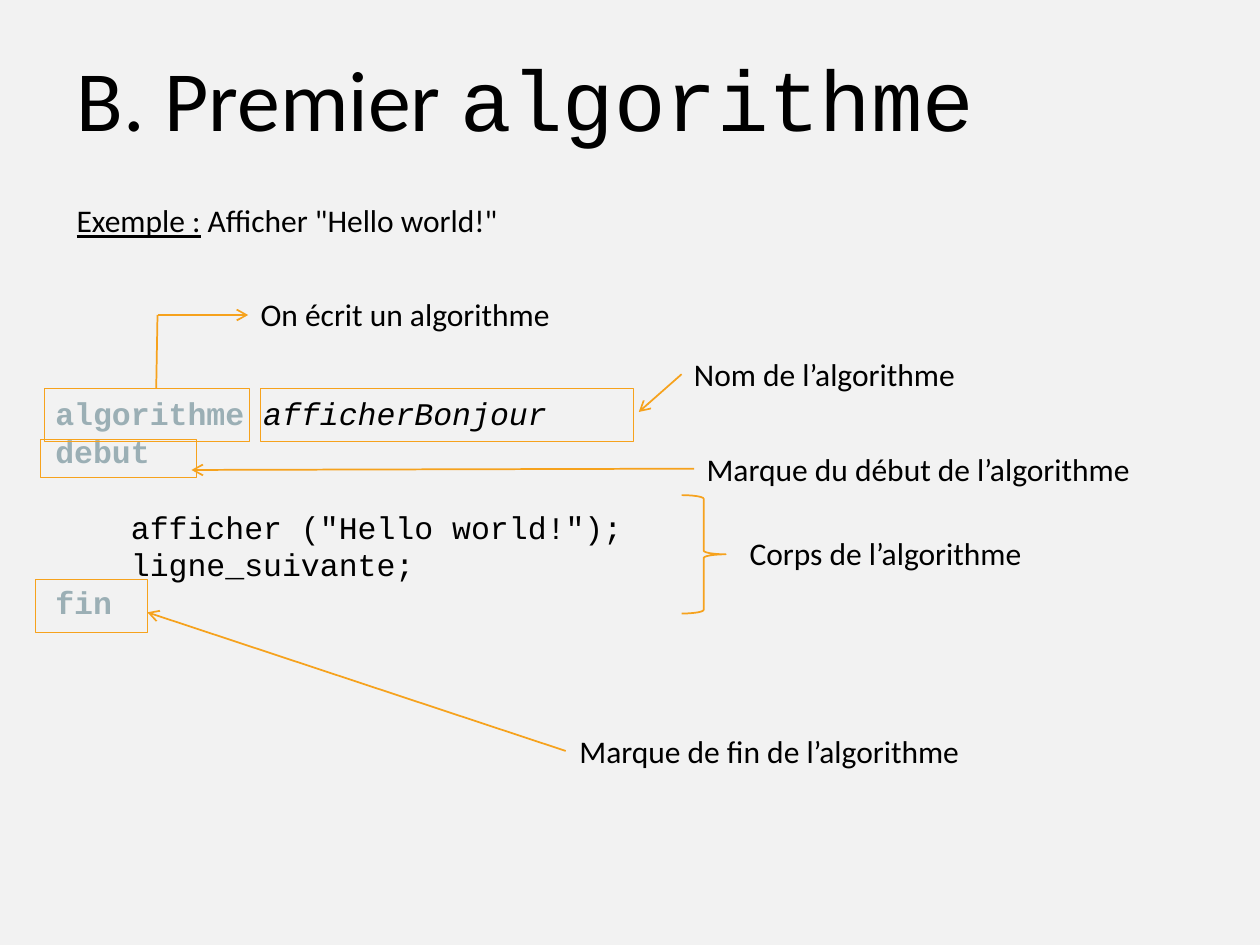
from lxml.etree import SubElement
from pptx import Presentation
from pptx.dml.color import RGBColor
from pptx.enum.shapes import MSO_CONNECTOR as CONN, MSO_SHAPE as SHAPE
from pptx.enum.text import MSO_ANCHOR as ANCHOR, PP_ALIGN as ALIGN
from pptx.oxml.ns import qn
from pptx.util import Inches, Pt

COLORS = {"paper": "F2F2F2", "ink": "000000", "keyword": "9BAFB5", "accent": "F6A21D"}
SANS, MONO = "Calibri", "Courier New"


class Page:
    def __init__(self, prs):
        self.s = prs.slides.add_slide(prs.slide_layouts[5])
        fill = self.s.background.fill
        fill.solid()
        fill.fore_color.rgb = self.color("paper")

    @staticmethod
    def color(name):
        return RGBColor.from_string(COLORS[name])

    def run(self, p, text, font=SANS, size=18, color="ink", **style):
        r = p.add_run()
        r.text = text
        r.font.name, r.font.size = font, Pt(size)
        r.font.color.rgb = self.color(color)
        for key, value in style.items():
            setattr(r.font, key, value)

    def title(self, x, y, w, h):
        sp = self.s.shapes.title
        sp.left, sp.top, sp.width, sp.height = map(Inches, (x, y, w, h))
        sp.text_frame.vertical_anchor = ANCHOR.MIDDLE
        p = sp.text_frame.paragraphs[0]
        p.alignment = ALIGN.LEFT
        return p

    def text(self, x, y, w, h=0.4):
        tf = self.s.shapes.add_textbox(*map(Inches, (x, y, w, h))).text_frame
        tf.word_wrap = True
        return tf

    def label(self, text, x, y, w):
        self.run(self.text(x, y, w).paragraphs[0], text)

    def outline(self, kind, x, y, w, h, weight=0.5):
        sp = self.s.shapes.add_shape(kind, *map(Inches, (x, y, w, h)))
        sp.shadow.inherit = False
        sp.fill.background()
        sp.line.color.rgb = self.color("accent")
        sp.line.width = Pt(weight)

    def line(self, start, end, arrow=True):
        c = self.s.shapes.add_connector(CONN.STRAIGHT, *map(Inches, start + end))
        c.line.color.rgb = self.color("accent")
        c.line.width = Pt(1)
        if arrow:
            SubElement(c.line._get_or_add_ln(), qn("a:tailEnd"), type="arrow")
        SubElement(c._element.spPr, qn("a:effectLst"))

    def code(self, x, y, w, h, lines):
        """Write lines of (indent in inches, space before in points, runs)."""
        tf = self.text(x, y, w, h)
        for i, (indent, gap, runs) in enumerate(lines):
            p = tf.add_paragraph() if i else tf.paragraphs[0]
            p.line_spacing, p.space_before = Pt(21.6), Pt(gap)
            p._p.get_or_add_pPr().set("marL", str(Inches(indent)))
            for text, style in runs:
                self.run(p, text, MONO, **style)


def main():
    prs = Presentation()
    prs.slide_width, prs.slide_height = Inches(10), Inches(7.5)
    page = Page(prs)

    p = page.title(0.51, 0.27, 8.99, 1)
    page.run(p, "B. Premier ", size=49)
    page.run(p, "algorithme", MONO, 49)

    p = page.text(0.51, 1.55, 3.94).paragraphs[0]
    page.run(p, "Exemple :", underline=True)
    page.run(p, " Afficher \"Hello world!\"")

    keyword = {"color": "keyword", "bold": True}
    page.code(0.34, 3.08, 4.75, 1.92, [
        (0, 0, [("algorithme ", keyword), ("afficherBonjour", {"italic": True})]),
        (0, 0, [("debut", keyword)]),
        (0.6, 21.6, [("afficher (\"Hello world!\");", {})]),
        (0.6, 0, [("ligne_suivante;", {})]),
        (0, 0, [("fin", keyword)]),
    ])

    for frame in [(0.35, 3.08, 1.63, 0.42), (2.07, 3.08, 2.96, 0.42),
                  (0.32, 3.49, 1.24, 0.3), (0.28, 4.6, 0.89, 0.42)]:
        page.outline(SHAPE.RECTANGLE, *frame)
    page.outline(SHAPE.RIGHT_BRACE, 5.41, 3.93, 0.35, 0.94, weight=1)

    page.line((1.24, 3.08), (1.25, 2.5), arrow=False)
    for start, end in [((1.25, 2.5), (1.97, 2.5)), ((5.41, 2.97), (5.07, 3.27)),
                       ((5.51, 3.72), (1.52, 3.73)), ((4.49, 5.96), (1.17, 4.86))]:
        page.line(start, end)

    for text, x, y, w in [
        ("On écrit un algorithme", 1.97, 2.29, 3.13),
        ("Nom de l’algorithme", 5.41, 2.77, 2.83),
        ("Marque du début de l’algorithme", 5.51, 3.52, 4.23),
        ("Corps de l’algorithme", 5.85, 4.19, 2.82),
        ("Marque de fin de l’algorithme", 4.5, 5.76, 4.23),
    ]:
        page.label(text, x, y, w)

    prs.save("out.pptx")


if __name__ == "__main__":
    main()
